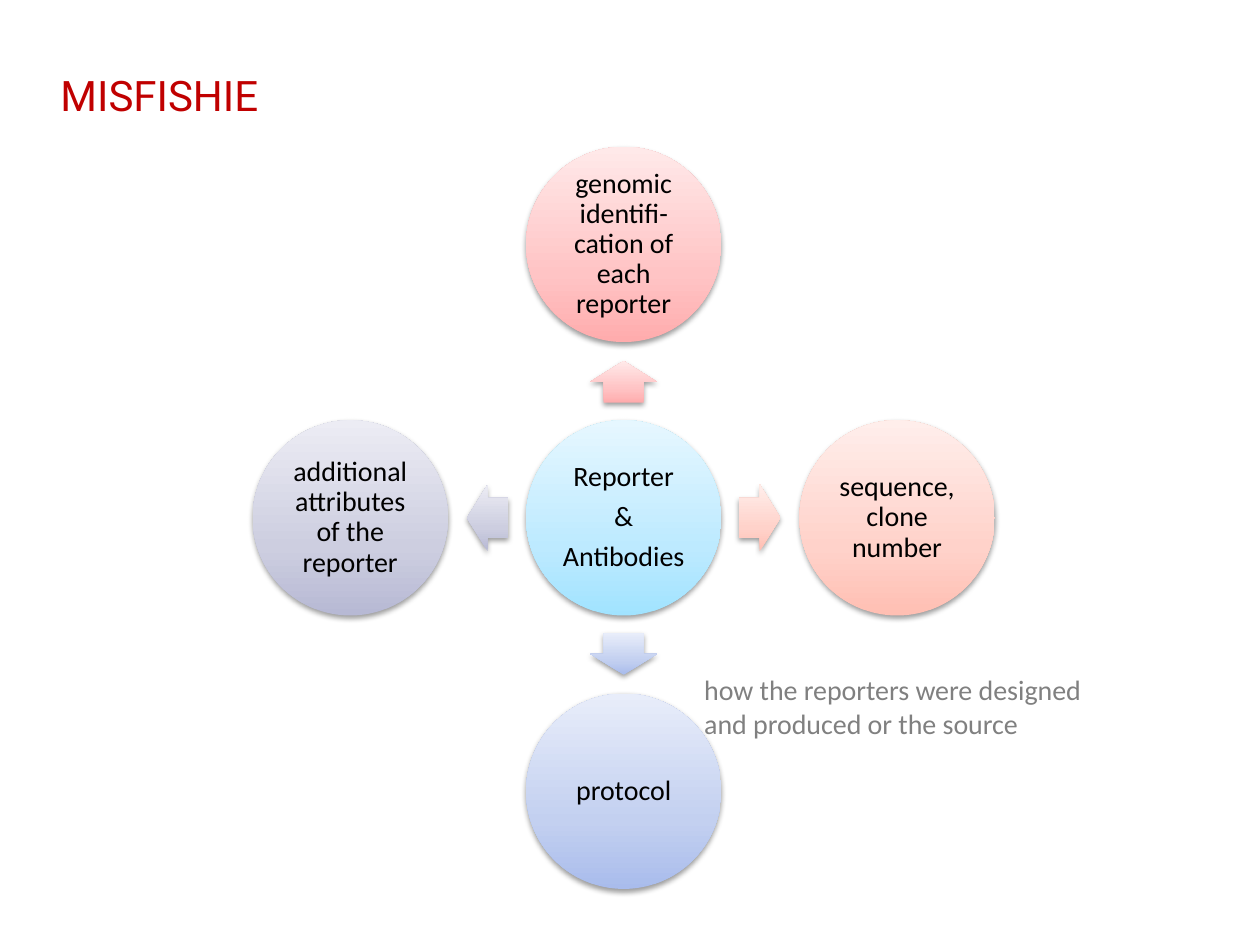
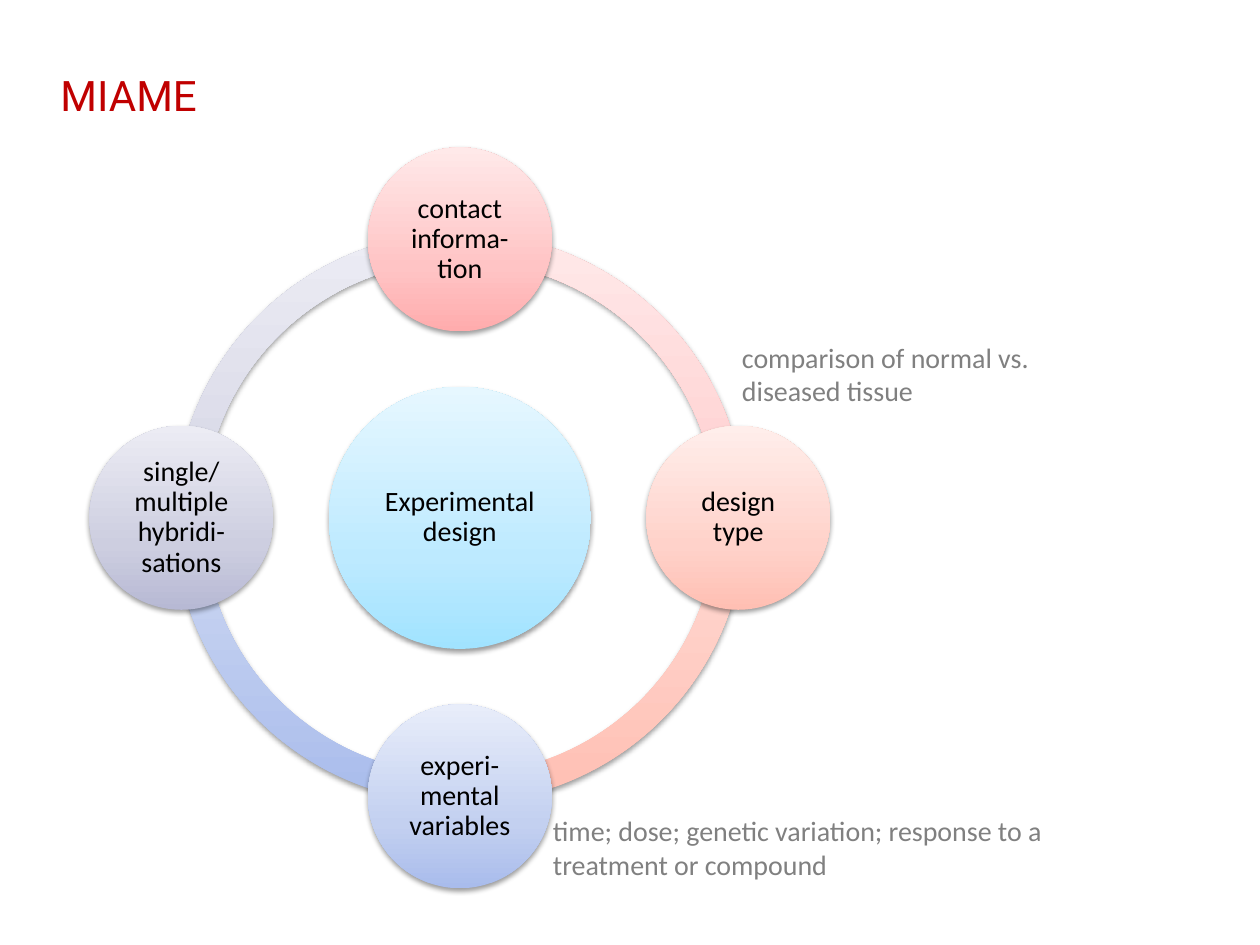
from copy import deepcopy
from math import cos, radians, sin

from lxml import etree
from pptx import Presentation
from pptx import util as u
from pptx.dml.color import RGBColor
from pptx.enum import shapes, text
from pptx.oxml.ns import qn

TITLE_COLOUR = "C00000"
LABEL_COLOUR = "000000"
NOTE_COLOUR = "808080"
SHADOW_COLOUR = "000000"
STOP_POSITIONS = (0, 0.35, 1)
HUB_GRADIENT = ("A1E3FF", "BDEAFF", "E6F7FF")
SATELLITES = (
    (270, ("FFACAD", "FFC4C5", "FFE9E9")),
    (0, ("FFBFB3", "FFD2CA", "FFEEEB")),
    (90, ("A9BCEC", "C3D0F0", "E8EDFA")),
    (180, ("B7B9D4", "CDCEE0", "ECECF4")),
)
MARGINS = ("margin_left", "margin_top", "margin_right", "margin_bottom")

TITLE_FONT = {"name": "Roboto", "size": u.Pt(24), "bold": False}
BODY_FONT = {"name": "Calibri", "size": u.Pt(16)}
TITLE_FRAME = {
    "word_wrap": True,
    "auto_size": text.MSO_AUTO_SIZE.NONE,
    "vertical_anchor": text.MSO_ANCHOR.TOP,
    "margin_top": 0,
    "margin_bottom": 0,
}
LABEL_FRAME = {
    "word_wrap": True,
    "vertical_anchor": text.MSO_ANCHOR.MIDDLE,
    **dict.fromkeys(MARGINS, u.Inches(0.02)),
}
LEFT_PARAGRAPH = {"alignment": text.PP_ALIGN.LEFT}
LABEL_PARAGRAPH = {
    "alignment": text.PP_ALIGN.CENTER,
    "line_spacing": 0.9,
    "space_after": u.Pt(5.6),
}


def rgb(colour):
    return RGBColor.from_string(colour)


def set_all(target, values):
    for name, value in values.items():
        setattr(target, name, value)


def write(shape, lines, frame_format, paragraph_format, font_format, colour):
    frame = shape.text_frame
    set_all(frame, frame_format)
    frame.text = "\n".join(lines)
    for paragraph in frame.paragraphs:
        set_all(paragraph, paragraph_format)
        set_all(paragraph.font, font_format)
        paragraph.font.color.rgb = rgb(colour)


def fill_gradient(shape, colours):
    shape.fill.gradient()
    shape.fill.gradient_angle = 90
    gradient = shape._element.spPr.find(qn("a:gradFill"))
    gradient.set("rotWithShape", "0")
    stop_list = gradient.find(qn("a:gsLst"))
    stop_list.append(deepcopy(stop_list[0]))
    for stop, position, colour in zip(shape.fill.gradient_stops, STOP_POSITIONS, colours):
        stop.position = position
        stop.color.rgb = rgb(colour)


def add_shadow(shape):
    shape.shadow.inherit = False
    effects = shape._element.spPr.find(qn("a:effectLst"))
    shadow = etree.SubElement(
        effects, qn("a:outerShdw"),
        blurRad=str(u.Pt(3.1)), dist=str(u.Pt(1.6)), dir="5400000", rotWithShape="0",
    )
    colour = etree.SubElement(shadow, qn("a:srgbClr"), val=str(rgb(SHADOW_COLOUR)))
    etree.SubElement(colour, qn("a:alpha"), val="38000")


def add_centred(slide, kind, centre, width, height, colours):
    x, y = centre
    shape = slide.shapes.add_shape(
        kind, u.Inches(x - width / 2), u.Inches(y - height / 2),
        u.Inches(width), u.Inches(height),
    )
    fill_gradient(shape, colours)
    shape.line.fill.background()
    add_shadow(shape)
    return shape


def add_circle(slide, centre, diameter, colours, *lines):
    circle = add_centred(slide, shapes.MSO_SHAPE.OVAL, centre, diameter, diameter, colours)
    write(circle, lines, LABEL_FRAME, LABEL_PARAGRAPH, BODY_FONT, LABEL_COLOUR)


def add_arrow(slide, centre, angle, colours):
    arrow = add_centred(slide, shapes.MSO_SHAPE.RIGHT_ARROW, centre, 0.33, 0.53, colours)
    arrow.adjustments[0] = 0.6
    arrow.adjustments[1] = 0.5
    arrow.rotation = angle


def add_quarter_ring(slide, centre, diameter, start, colours):
    ring = add_centred(slide, shapes.MSO_SHAPE.BLOCK_ARC, centre, diameter, diameter, colours)
    for index, angle in enumerate((start, (start + 90) % 360)):
        ring.adjustments[index] = angle * 0.6
    ring.adjustments[2] = 0.05


def around(centre, angle, distance):
    x, y = centre
    return x + distance * cos(radians(angle)), y + distance * sin(radians(angle))


def add_note(slide, left, top, *lines):
    note = slide.shapes.add_textbox(u.Inches(left), u.Inches(top), u.Inches(4.21), u.Inches(0.64))
    write(note, lines, {"word_wrap": True}, LEFT_PARAGRAPH, BODY_FONT, NOTE_COLOUR)


def add_titled_slide(presentation, title_text):
    slide = presentation.slides.add_slide(presentation.slide_layouts[5])
    title = slide.shapes.title
    set_all(title, {
        "left": u.Inches(0.38), "top": u.Inches(0.55),
        "width": u.Inches(8.12), "height": u.Inches(0.81),
    })
    write(title, [title_text], TITLE_FRAME, LEFT_PARAGRAPH, TITLE_FONT, TITLE_COLOUR)
    return slide


def build_misfishie(presentation):
    slide = add_titled_slide(presentation, "MISFISHIE")
    centre, diameter = (4.95, 4.11), 1.55
    labels = (
        "genomic identifi-cation of each reporter",
        "sequence, clone number",
        "protocol",
        "additional attributes of the reporter",
    )
    add_circle(slide, centre, diameter, HUB_GRADIENT, "Reporter", "&", "Antibodies")
    for (angle, colours), label in zip(SATELLITES, labels):
        add_arrow(slide, around(centre, angle, 1.08), angle, colours)
        add_circle(slide, around(centre, angle, 2.17), diameter, colours, label)
    add_note(slide, 5.49, 5.29, "how the reporters were designed", "and produced or the source")


def build_miame(presentation):
    slide = add_titled_slide(presentation, "MIAME")
    centre = (3.65, 4.11)
    labels = (
        "contact informa-tion",
        "design type",
        "experi-mental variables",
        "single/ multiple hybridi-sations",
    )
    for angle, colours in reversed(SATELLITES):
        add_quarter_ring(slide, centre, 4.53, angle, colours)
    add_circle(slide, centre, 2.08, HUB_GRADIENT, "Experimental design")
    for (angle, colours), label in zip(SATELLITES, labels):
        add_circle(slide, around(centre, angle, 2.21), 1.46, colours, label)
    add_note(slide, 5.79, 2.65, "comparison of normal vs.", "diseased tissue")
    add_note(slide, 4.29, 6.41, "time; dose; genetic variation; response to a treatment or compound")


def main():
    presentation = Presentation()
    presentation.slide_width = u.Inches(10)
    presentation.slide_height = u.Inches(7.5)
    build_misfishie(presentation)
    build_miame(presentation)
    presentation.save("out.pptx")


if __name__ == "__main__":
    main()
